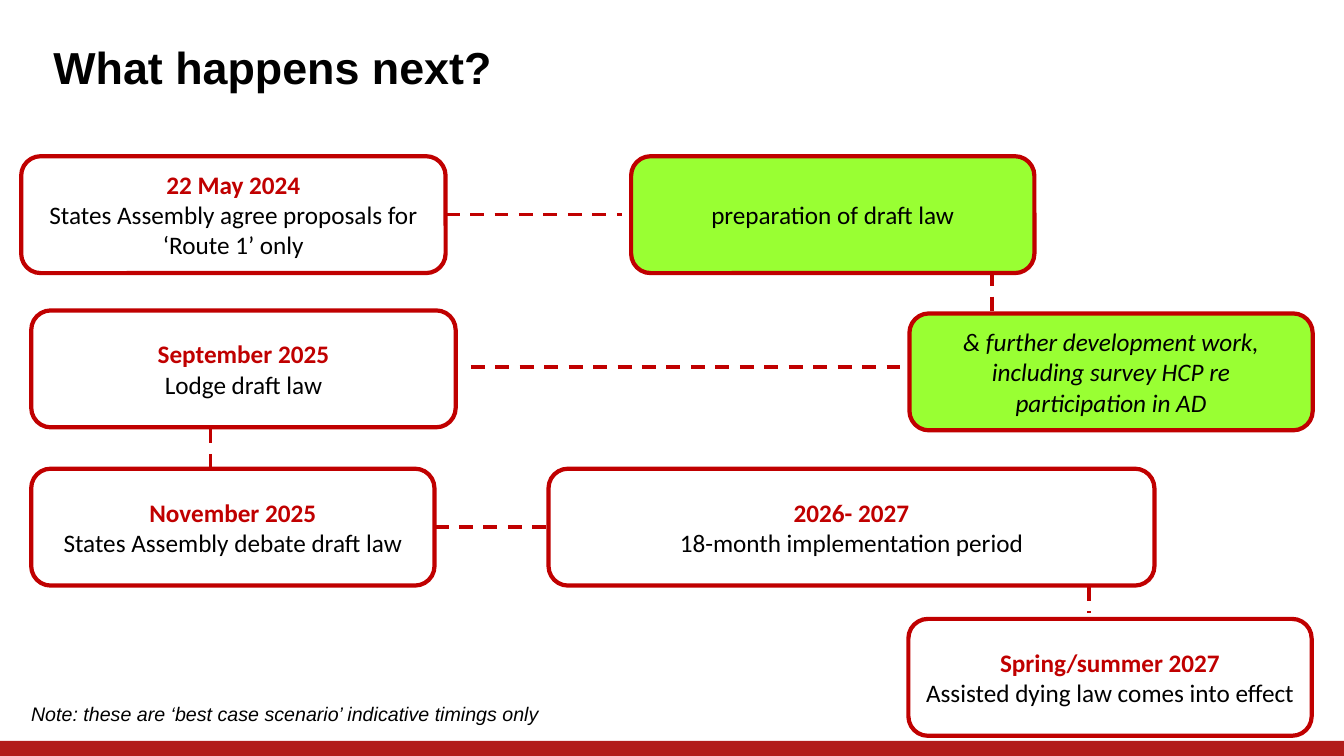
from dataclasses import dataclass
from typing import Optional

from lxml.etree import SubElement
from pptx import Presentation
from pptx.dml.color import RGBColor
from pptx.enum.dml import MSO_LINE
from pptx.enum.shapes import MSO_CONNECTOR, MSO_SHAPE
from pptx.enum.text import MSO_ANCHOR, PP_ALIGN
from pptx.oxml.ns import qn
from pptx.shapes.autoshape import Shape
from pptx.shapes.connector import Connector
from pptx.slide import Slide
from pptx.text.text import TextFrame
from pptx.util import Emu, Pt

PX = 9144  # 100 px to the inch
RED = RGBColor(0xC0, 0x00, 0x00)
BRICK = RGBColor(0xB2, 0x1C, 0x1A)
GREEN = RGBColor(0x99, 0xFF, 0x33)
BLACK = RGBColor(0, 0, 0)
WIDTH, HEIGHT = 1333, 750
STEP_H = 116
RIGHT, LEFT = 3, 1


@dataclass(frozen=True)
class Step:
    left: int
    top: int
    width: int
    lines: tuple[str, ...]
    date: str = ""
    fill: Optional[RGBColor] = None
    italic: bool = False


@dataclass(frozen=True)
class Link:
    """A dashed line; start and end name the steps it is joined to."""
    x1: int
    y1: int
    x2: int
    y2: int
    start: str = ""
    end: str = ""


STEPS = {
    "agree": Step(21, 155, 421, ("States Assembly agree proposals for ‘Route 1’ only",),
                  "22 May 2024"),
    "draft": Step(626, 155, 400, ("preparation of draft law",), fill=GREEN),
    "survey": Step(902, 311, 400, ("& further development work,",
                                   "including survey HCP re participation in AD"),
                   fill=GREEN, italic=True),
    "lodge": Step(31, 308, 421, ("Lodge draft law",), "September 2025"),
    "debate": Step(31, 465, 400, ("States Assembly debate draft law",), "November 2025"),
    "rollout": Step(544, 465, 601, ("18-month implementation period",), "2026- 2027"),
    "effect": Step(901, 614, 400, ("Assisted dying law comes into effect",),
                   "Spring/summer 2027"),
}

LINKS = (
    Link(442, 213, 617, 213, start="agree"),
    Link(467, 364, 893, 364),
    Link(431, 523, 544, 523, start="debate", end="rollout"),
    Link(984, 270, 984, 312),
    Link(209, 426, 209, 468),
    Link(1080, 582, 1080, 608),
)


def px(*sizes: int) -> list[Emu]:
    return [Emu(size * PX) for size in sizes]


def write(frame: TextFrame, text: str, *, size: int, font: str = "Calibri",
          color: RGBColor = BLACK, bold: bool = False, italic: bool = False,
          align: PP_ALIGN = PP_ALIGN.LEFT, spacing: float = 1.0) -> None:
    """Fill the empty first paragraph, or add one after the text."""
    para = frame.add_paragraph() if frame.text else frame.paragraphs[0]
    para.alignment, para.line_spacing = align, spacing
    run = para.add_run()
    run.text = text
    style = run.font
    style.name, style.size = font, Pt(size)
    style.bold, style.italic = bold, italic
    style.color.rgb = color


def add_title(slide: Slide, text: str) -> None:
    title = slide.shapes.title
    title.left, title.top, title.width, title.height = px(43, 40, 1199, 91)
    title.text_frame.vertical_anchor = MSO_ANCHOR.TOP
    write(title.text_frame, text, size=32, font="Arial", bold=True, spacing=0.9)


def add_bar(slide: Slide) -> None:
    bar = slide.shapes.add_shape(MSO_SHAPE.RECTANGLE, *px(0, 735, WIDTH, 15))
    bar.shadow.inherit = False
    bar.fill.solid()
    bar.fill.fore_color.rgb = BRICK
    bar.line.fill.background()


def add_step(slide: Slide, step: Step) -> Shape:
    box = slide.shapes.add_shape(MSO_SHAPE.ROUNDED_RECTANGLE,
                                 *px(step.left, step.top, step.width, STEP_H))
    box.shadow.inherit = False
    if step.fill is None:
        box.fill.background()
    else:
        box.fill.solid()
        box.fill.fore_color.rgb = step.fill
    box.line.color.rgb, box.line.width = RED, Pt(3)
    frame = box.text_frame
    frame.word_wrap, frame.vertical_anchor = True, MSO_ANCHOR.MIDDLE
    if step.date:
        write(frame, step.date, size=18, color=RED, bold=True, align=PP_ALIGN.CENTER)
    for line in step.lines:
        write(frame, line, size=18, italic=step.italic, align=PP_ALIGN.CENTER)
    return box


def add_link(slide: Slide, link: Link, boxes: dict[str, Shape]) -> Connector:
    line = slide.shapes.add_connector(MSO_CONNECTOR.STRAIGHT,
                                      *px(link.x1, link.y1, link.x2, link.y2))
    line.line.color.rgb, line.line.width = RED, Pt(2.5)
    line.line.dash_style = MSO_LINE.DASH
    SubElement(line._element.spPr, qn("a:effectLst"))
    if link.start:
        line.begin_connect(boxes[link.start], RIGHT)
    if link.end:
        line.end_connect(boxes[link.end], LEFT)
    return line


def add_note(slide: Slide, text: str) -> None:
    frame = slide.shapes.add_textbox(*px(21, 691, 559, 64)).text_frame
    frame.word_wrap = True
    write(frame, text, size=14, font="Arial", italic=True)


def main() -> None:
    deck = Presentation()
    deck.slide_width, deck.slide_height = px(WIDTH, HEIGHT)
    slide = deck.slides.add_slide(deck.slide_layouts[5])
    add_bar(slide)
    add_title(slide, "What happens next?")
    boxes = {name: add_step(slide, step) for name, step in STEPS.items()}
    for link in LINKS:
        add_link(slide, link, boxes)
    add_note(slide, "Note: these are ‘best case scenario’ indicative timings only")
    deck.save("out.pptx")


if __name__ == "__main__":
    main()
